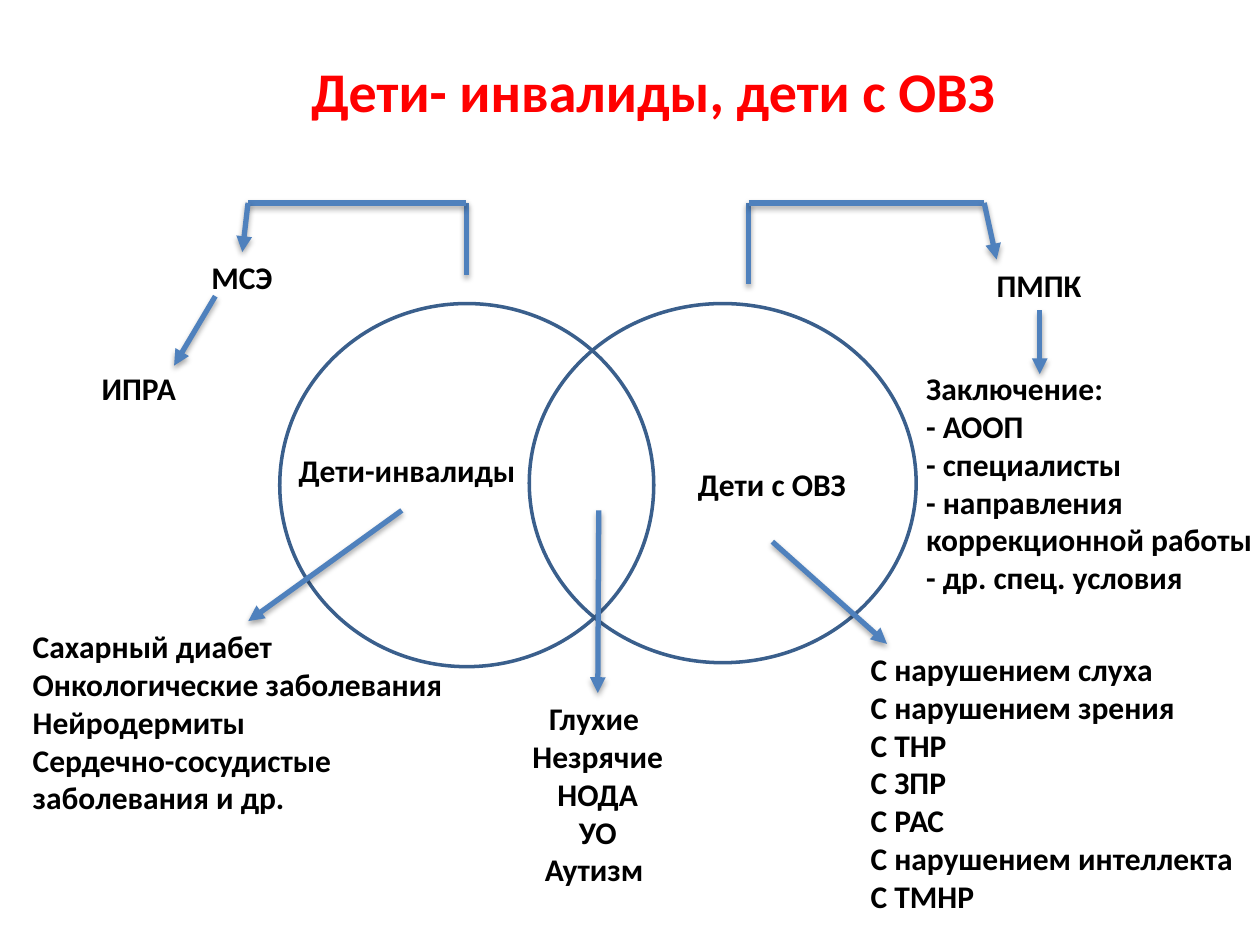
from lxml import etree
from pptx import Presentation
from pptx.dml.color import RGBColor
from pptx.enum.shapes import MSO_CONNECTOR, MSO_SHAPE
from pptx.enum.text import MSO_ANCHOR, MSO_AUTO_SIZE, PP_ALIGN
from pptx.oxml import parse_xml
from pptx.oxml.ns import qn
from pptx.util import Cm, Pt

RED = RGBColor(0xFF, 0x00, 0x00)
BLACK = RGBColor(0x00, 0x00, 0x00)
OUTLINE = RGBColor(0x3A, 0x5F, 0x8C)
BLUE = RGBColor(0x4F, 0x81, 0xBD)
SHADOW = (
    '<a:effectLst xmlns:a="http://schemas.openxmlformats.org/drawingml/2006/main">'
    '<a:outerShdw blurRad="40000" dist="23000" dir="5400000" rotWithShape="0">'
    '<a:srgbClr val="000000"><a:alpha val="35000"/></a:srgbClr>'
    '</a:outerShdw></a:effectLst>'
)

prs = Presentation()
prs.slide_width, prs.slide_height = Cm(25.4), Cm(19.05)
s = prs.slides.add_slide(prs.slide_layouts[6])


def add_text(box, lines, size=18, color=BLACK, align=PP_ALIGN.LEFT, wrap=False):
    sp = s.shapes.add_textbox(*[Cm(v) for v in box])
    tf = sp.text_frame
    tf.text = "\n".join(lines)
    tf.word_wrap = wrap
    tf.auto_size = MSO_AUTO_SIZE.SHAPE_TO_FIT_TEXT
    for p in tf.paragraphs:
        p.alignment = align
        for r in p.runs:
            r.font.name = "Calibri"
            r.font.size = Pt(size)
            r.font.bold = True
            r.font.color.rgb = color
    return sp


def add_line(start, end, arrow=True):
    cx = s.shapes.add_connector(MSO_CONNECTOR.STRAIGHT, *[Cm(v) for v in start + end])
    cx.line.color.rgb = BLUE
    cx.line.width = Pt(3)
    if arrow:
        etree.SubElement(cx.line._get_or_add_ln(), qn("a:tailEnd"), type="triangle")
    cx._element.spPr.append(parse_xml(SHADOW))
    return cx


# Title
title = add_text((4.27, 1.12, 17.81, 1.57), ["Дети- инвалиды, дети с ОВЗ"],
                 32, RED, PP_ALIGN.CENTER, True)
title.text_frame.auto_size = MSO_AUTO_SIZE.NONE
title.text_frame.vertical_anchor = MSO_ANCHOR.MIDDLE
p = title.text_frame.paragraphs[0]
p.line_spacing = 0.9
pPr = p._p.get_or_add_pPr()
pPr.set("marL", str(Cm(0.95)))
pPr.set("indent", str(-Cm(0.95)))

# Overlapping circles
for box in [(5.64, 6.12, 7.54, 7.32), (10.67, 6.12, 7.8, 7.24)]:
    sp = s.shapes.add_shape(MSO_SHAPE.OVAL, *[Cm(v) for v in box])
    sp.shadow.inherit = False
    sp.fill.background()
    sp.line.color.rgb = OUTLINE
    sp.line.width = Pt(2)

# Circle names
add_text((5.77, 8.97, 5.99, 1.02), ["Дети-инвалиды"], wrap=True)
add_text((13.82, 9.25, 3.53, 1.02), ["Дети с ОВЗ"])

# Groups of children
illnesses = add_text((0.41, 12.52, 9.19, 4.88), [
    "Сахарный диабет", "Онкологические заболевания", "Нейродермиты",
    "Сердечно-сосудистые заболевания и др."], wrap=True)
shared = add_text((10.46, 13.97, 3.18, 4.11), [
    "Глухие ", "Незрячие", "НОДА", "УО", "Аутизм "], align=PP_ALIGN.CENTER)
add_text((17.3, 12.98, 7.9, 5.64), [
    "С нарушением слуха", "С нарушением зрения", "С ТНР", "С ЗПР", "С РАС",
    "С нарушением интеллекта", "С ТМНР"])

# Commissions and their documents
add_text((18.42, 7.32, 7.14, 4.88), [
    "Заключение:", "- АООП", "- специалисты", "- направления",
    "коррекционной работы", "- др. спец. условия"])
pmpk = add_text((19.84, 5.23, 2.24, 1.02), ["ПМПК"])
mse = add_text((4.01, 5.08, 1.75, 1.02), ["МСЭ"])
add_text((1.8, 7.32, 2.03, 1.02), ["ИПРА"])

# Brackets from the circles to the commissions
add_line((9.4, 5.54), (9.4, 4.09), arrow=False)
add_line((9.4, 4.09), (5, 4.09), arrow=False)
add_line((5, 4.09), (4.88, 5.08)).end_connect(mse, 0)
add_line((15.09, 5.72), (15.09, 4.09), arrow=False)
add_line((15.09, 4.09), (19.84, 4.09), arrow=False)
add_line((19.84, 4.09), (20.09, 5.23))

# Arrows to the documents
add_line((4.34, 5.97), (3.51, 7.37))
add_line((20.96, 6.25), (20.96, 7.54)).begin_connect(pmpk, 2)

# Arrows to the groups
add_line((8.1, 10.29), (5, 12.52)).end_connect(illnesses, 0)
add_line((12.07, 10.29), (12.07, 13.97)).end_connect(shared, 0)
add_line((15.57, 10.92), (17.88, 12.98))

prs.save("out.pptx")
